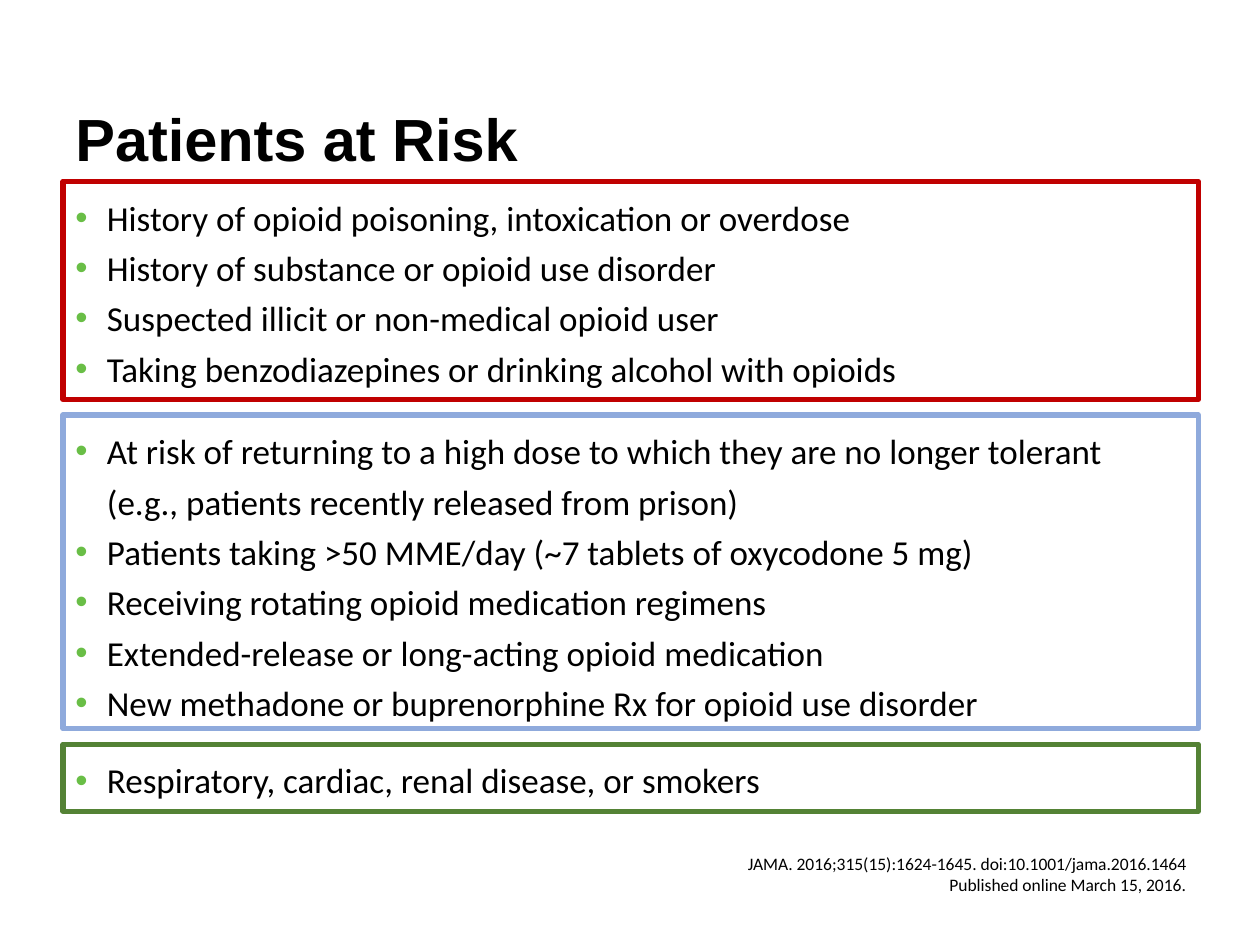
from pptx import Presentation
from pptx.dml.color import RGBColor
from pptx.enum.shapes import MSO_SHAPE
from pptx.enum.text import MSO_ANCHOR, PP_ALIGN
from pptx.oxml.ns import qn
from pptx.util import Pt
from lxml.etree import SubElement

BLACK = RGBColor(0x00, 0x00, 0x00)
RED = RGBColor(0xC0, 0x00, 0x00)
BLUE = RGBColor(0x8F, 0xAA, 0xDC)
GREEN = RGBColor(0x54, 0x82, 0x35)
BULLET_GREEN = RGBColor(0x69, 0xBE, 0x46)

# Content
TITLE = "Patients at Risk"
CITATION = ("JAMA. 2016;315(15):1624-1645. doi:10.1001/jama.2016.1464 "
            "Published online March 15, 2016.")
# Outline colour, height, bullet texts (\v is a line break)
RISK_GROUPS = [
    (RED, 124.6, [
        "History of opioid poisoning, intoxication or overdose",
        "History of substance or opioid use disorder",
        "Suspected illicit or non-medical opioid user",
        "Taking benzodiazepines or drinking alcohol with opioids",
    ]),
    (BLUE, 179.3, [
        "At risk of returning to a high dose to which they are no longer tolerant "
        "\v(e.g., patients recently released from prison)",
        "Patients taking >50 MME/day (~7 tablets of oxycodone 5 mg)",
        "Receiving rotating opioid medication regimens",
        "Extended-release or long-acting opioid medication",
        "New methadone or buprenorphine Rx for opioid use disorder",
    ]),
    (GREEN, 38.2, ["Respiratory, cardiac, renal disease, or smokers"]),
]

# Layout in points
LEFT, WIDTH = 36, 648.7
GROUPS_TOP, GROUP_GAP = 103.7, 8.9
INDENT = 18


def set_font(paragraph, name, size, bold=False):
    for run in paragraph.runs:
        run.font.name = name
        run.font.size = Pt(size)
        run.font.bold = bold
        run.font.color.rgb = BLACK


def add_text(slide, text, left, top, width, height):
    box = slide.shapes.add_textbox(Pt(left), Pt(top), Pt(width), Pt(height))
    box.text_frame.word_wrap = True
    box.text_frame.text = text
    return box.text_frame


def add_bullet(paragraph):
    properties = paragraph._p.get_or_add_pPr()
    properties.set("marL", str(Pt(INDENT)))
    properties.set("indent", str(-Pt(INDENT)))
    color = SubElement(properties, qn("a:buClr"))
    SubElement(color, qn("a:srgbClr"), val=str(BULLET_GREEN))
    SubElement(properties, qn("a:buFont"), typeface="Arial")
    SubElement(properties, qn("a:buChar"), char="•")


def add_group(slide, top, height, color, items):
    shape = slide.shapes.add_shape(
        MSO_SHAPE.RECTANGLE, Pt(LEFT), Pt(top), Pt(WIDTH), Pt(height))
    shape.shadow.inherit = False
    shape.fill.background()
    shape.line.color.rgb = color
    shape.line.width = Pt(3)
    text_frame = shape.text_frame
    text_frame.word_wrap = True
    text_frame.vertical_anchor = MSO_ANCHOR.TOP
    for index, item in enumerate(items):
        paragraph = text_frame.add_paragraph() if index else text_frame.paragraphs[0]
        paragraph.text = item
        add_bullet(paragraph)
        paragraph.alignment = PP_ALIGN.LEFT
        paragraph.line_spacing = 1.2
        set_font(paragraph, "Calibri", 20)


def main():
    presentation = Presentation()
    presentation.slide_width, presentation.slide_height = Pt(720), Pt(540)
    slide = presentation.slides.add_slide(presentation.slide_layouts[6])

    # Title
    title = add_text(slide, TITLE, LEFT, 28.8, WIDTH, 104.4)
    title.vertical_anchor = MSO_ANCHOR.MIDDLE
    title.paragraphs[0].line_spacing = 0.9
    set_font(title.paragraphs[0], "Arial", 34, bold=True)

    # Citation, right edge in line with the groups
    citation_width = 297.4
    citation = add_text(slide, CITATION, LEFT + WIDTH - citation_width, 483.8,
                        citation_width, 31.7)
    citation.paragraphs[0].alignment = PP_ALIGN.RIGHT
    set_font(citation.paragraphs[0], "Calibri", 10)

    # Risk groups, stacked with equal gaps
    top = GROUPS_TOP
    for color, height, items in RISK_GROUPS:
        add_group(slide, top, height, color, items)
        top += height + GROUP_GAP

    presentation.save("out.pptx")


if __name__ == "__main__":
    main()
